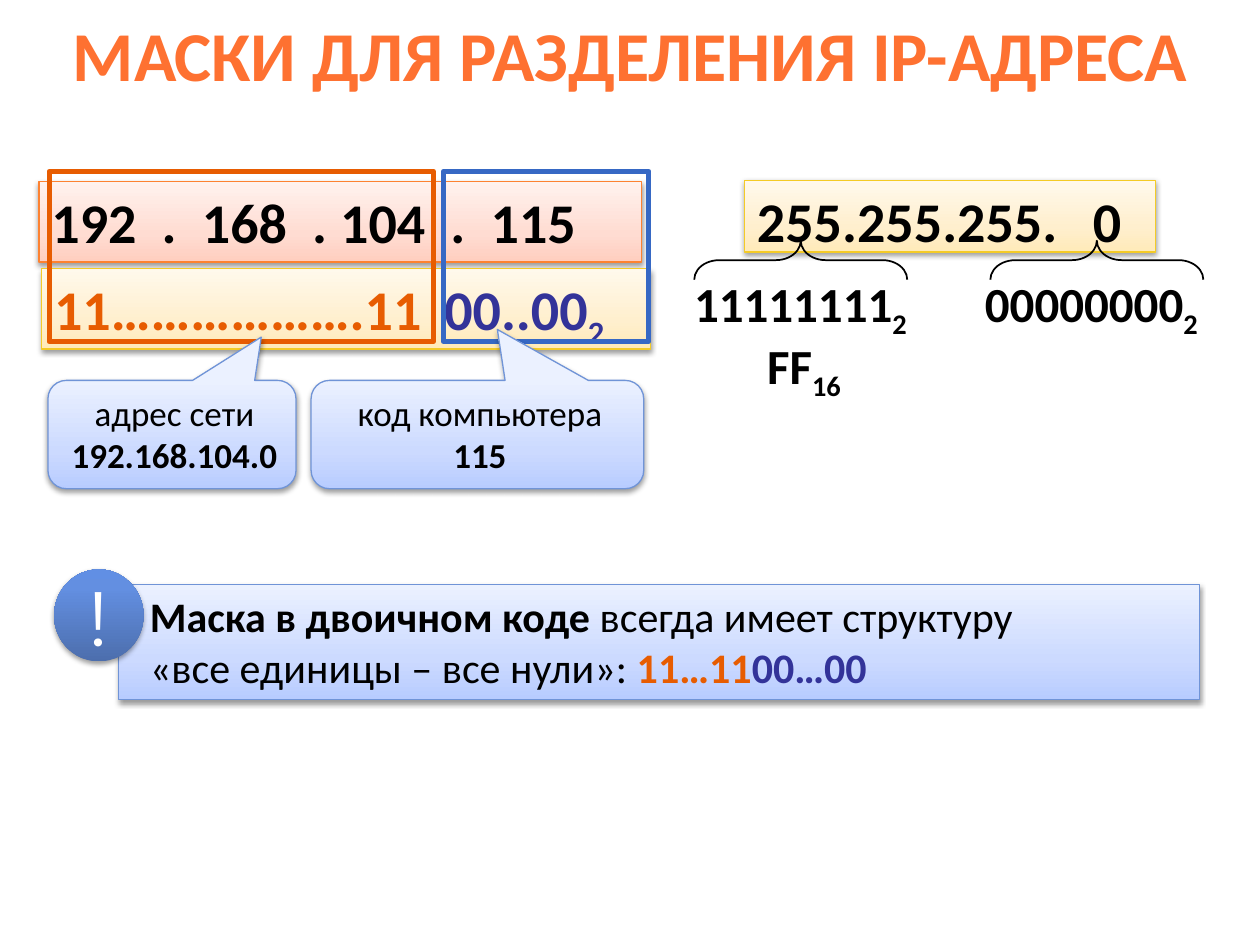
from dataclasses import dataclass
from typing import Optional

from lxml import etree
from pptx import Presentation
from pptx.dml.color import RGBColor
from pptx.enum.shapes import MSO_SHAPE
from pptx.enum.text import MSO_ANCHOR, PP_ALIGN
from pptx.oxml.ns import qn
from pptx.util import Pt

RECT, OVAL = MSO_SHAPE.RECTANGLE, MSO_SHAPE.OVAL
CALLOUT = MSO_SHAPE.ROUNDED_RECTANGULAR_CALLOUT
BRACE = MSO_SHAPE.LEFT_BRACE
TOP, MIDDLE = MSO_ANCHOR.TOP, MSO_ANCHOR.MIDDLE
LEFT, CENTER = PP_ALIGN.LEFT, PP_ALIGN.CENTER


@dataclass(frozen=True)
class Look:
    """Gradient stops from bottom to top, and the outline colour."""
    stops: tuple
    line: Optional[str] = None


class Theme:
    font, badge_font = "Calibri", "Montserrat"
    title_size, address_size, binary_size = 40, 32, 28
    rule_size, label_size, badge_size = 24, 20, 44
    title, text, white = "FE7131", "000000", "FFFFFF"
    network, host, host_frame = "E75C01", "333399", "3668C4"
    pink = Look(((0, "FFCEBF"), (35, "FFDCD2"), (100, "FFF2EE")), "FD8231")
    yellow = Look(((0, "FFEAB9"), (35, "FFEFCE"), (100, "FFF9EC")), "F4CB27")
    blue = Look(((0, "B8CCFF"), (35, "CCDAFF"), (100, "EBF1FF")), "7094D7")
    badge = Look(((0, "4C6EAD"), (80, "638FE1"), (100, "618FE4")))


@dataclass(frozen=True)
class Span:
    text: str
    bold: Optional[bool] = None
    color: Optional[str] = None
    subscript: bool = False
    break_before: bool = False


def rgb(code):
    return RGBColor.from_string(code)


def add_element(parent, tag, **attributes):
    return etree.SubElement(parent, qn(tag), {k: str(v) for k, v in attributes.items()})


class SlideBuilder:
    def __init__(self, slide, theme):
        self.slide, self.theme = slide, theme
        self.shapes = slide.shapes

    def start_group(self):
        """Place all later elements in a new group."""
        self.shapes = self.slide.shapes.add_group_shape().shapes

    def title(self, box, text):
        heading = self.slide.shapes.title
        heading.left, heading.top, heading.width, heading.height = map(Pt, box)
        heading.text_frame.vertical_anchor = MIDDLE
        self.set_text(heading.text_frame, [[Span(text)]], self.theme.title_size,
                      color=self.theme.title, align=CENTER)

    def set_text(self, frame, lines, size, color=None, bold=True, align=LEFT,
                 font=None, tabs=()):
        for index, spans in enumerate(lines):
            paragraph = frame.paragraphs[0] if index == 0 else frame.add_paragraph()
            paragraph.alignment = align
            style = paragraph.font
            style.name, style.size, style.bold = font or self.theme.font, Pt(size), bold
            style.color.rgb = rgb(color or self.theme.text)
            if tabs:
                tab_list = etree.Element(qn("a:tabLst"))
                for position in tabs:
                    add_element(tab_list, "a:tab", pos=Pt(position), algn="l")
                style._element.addprevious(tab_list)
            for span in spans:
                if span.break_before:
                    paragraph.add_line_break()
                run = paragraph.add_run()
                run.text = span.text
                if span.bold is not None:
                    run.font.bold = span.bold
                if span.color:
                    run.font.color.rgb = rgb(span.color)
                if span.subscript:
                    run.font._element.set("baseline", "-25000")

    def outline(self, kind, box, color, width, adjustments=(), rotation=0):
        shape = self.shapes.add_shape(kind, *map(Pt, box))
        shape.rotation = rotation
        for index, value in enumerate(adjustments):
            shape.adjustments[index] = value
        shape.shadow.inherit = False
        shape.fill.background()
        if color:
            shape.line.color.rgb = rgb(color)
            shape.line.width = Pt(width)
            add_element(shape._element.spPr.find(qn("a:ln")), "a:round")
        else:
            shape.line.fill.background()
        return shape

    def panel(self, kind, box, look, lines, size, adjustments=(), anchor=TOP,
              margins=(7.2, 7.2), wrap=True, **text_style):
        """Gradient shape with a soft shadow and text."""
        shape = self.outline(kind, box, look.line, 0.75, adjustments)
        shape.fill.gradient()
        properties = shape._element.spPr
        gradient = properties.find(qn("a:gradFill"))
        stop_list = gradient.find(qn("a:gsLst"))
        for stop in list(stop_list):
            stop_list.remove(stop)
        for position, color in look.stops:
            stop = add_element(stop_list, "a:gs", pos=position * 1000)
            add_element(stop, "a:srgbClr", val=color)
        gradient.find(qn("a:lin")).set("ang", "16200000")
        shadow = add_element(properties.find(qn("a:effectLst")), "a:outerShdw",
                             blurRad=Pt(3.1), dist=Pt(1.6), dir=5400000, rotWithShape=0)
        add_element(add_element(shadow, "a:srgbClr", val=self.theme.text),
                    "a:alpha", val=38000)
        frame = shape.text_frame
        frame.word_wrap, frame.vertical_anchor = wrap, anchor
        frame.margin_left, frame.margin_right = map(Pt, margins)
        self.set_text(frame, lines, size, **text_style)

    def number(self, box, digits, base):
        """Number with its base as a subscript."""
        frame = self.shapes.add_textbox(*map(Pt, box)).text_frame
        frame.word_wrap = False
        self.set_text(frame, [[Span(digits), Span(base, subscript=True)]],
                      self.theme.binary_size)


def main():
    presentation = Presentation()
    presentation.slide_width, presentation.slide_height = Pt(720), Pt(540)
    theme = Theme()
    page = SlideBuilder(presentation.slides.add_slide(presentation.slide_layouts[5]), theme)
    page.title((0, 0, 720, 61), "МАСКИ ДЛЯ РАЗДЕЛЕНИЯ IP-АДРЕСА")

    page.panel(RECT, (22.3, 103.7, 344.2, 46), theme.pink,
               [[Span("192\t.\t168\t.\t104\t.\t115")]], theme.address_size,
               tabs=(63, 86, 149, 165, 228, 251))
    page.panel(RECT, (425.5, 103, 234.7, 41), theme.yellow,
               [[Span("255.255.255.\t0")]], theme.address_size, tabs=(192,))

    page.number((389.5, 152.6, 145.4, 41), "11111111", "2")
    page.number((431.3, 187.9, 69.8, 41), "FF", "16")
    page.number((555.8, 152.6, 151.2, 41), "00000000", "2")
    for left in (446.4, 615.6):
        page.outline(BRACE, (left, 87.8, 22.3, 121.7), theme.text, 1,
                     adjustments=(0.635, 0.5), rotation=90)

    page.panel(RECT, (23.8, 153.4, 347.8, 46), theme.yellow,
               [[Span("11……………….11\t", color=theme.network),
                 Span("00..00", color=theme.host),
                 Span("2", color=theme.host, subscript=True)]],
               theme.address_size, tabs=(223,))
    for left, width, color in ((28.1, 219.6, theme.network),
                               (253.4, 117.4, theme.host_frame)):
        page.outline(RECT, (left, 97.9, width, 97.2), color, 3)

    for left, width, tip, label, value in (
            (27.4, 141.8, (0.36, -0.9), "адрес сети", "192.168.104.0"),
            (177.8, 190.1, (0.06, -0.97), "код компьютера", "115")):
        page.panel(CALLOUT, (left, 217.4, width, 61.9), theme.blue,
                   [[Span(label)], [Span(value, bold=True)]], theme.label_size,
                   adjustments=(*tip, 0.17), margins=(4.3, 1.4),
                   bold=False, align=CENTER)

    page.start_group()
    page.panel(RECT, (67.7, 334.1, 617.8, 65.5), theme.blue,
               [[Span("Маска в двоичном коде ", bold=True),
                 Span("всегда имеет структуру"),
                 Span("«все единицы – все нули»: ", break_before=True),
                 Span("11…11", bold=True, color=theme.network),
                 Span("00…00", bold=True, color=theme.host)]],
               theme.rule_size, margins=(18, 7.2), bold=False)
    page.panel(OVAL, (30.9, 325.4, 51.1, 52.6), theme.badge, [[Span("!")]],
               theme.badge_size, anchor=MIDDLE, wrap=False, color=theme.white,
               bold=False, align=CENTER, font=theme.badge_font)

    presentation.save("out.pptx")


if __name__ == "__main__":
    main()
